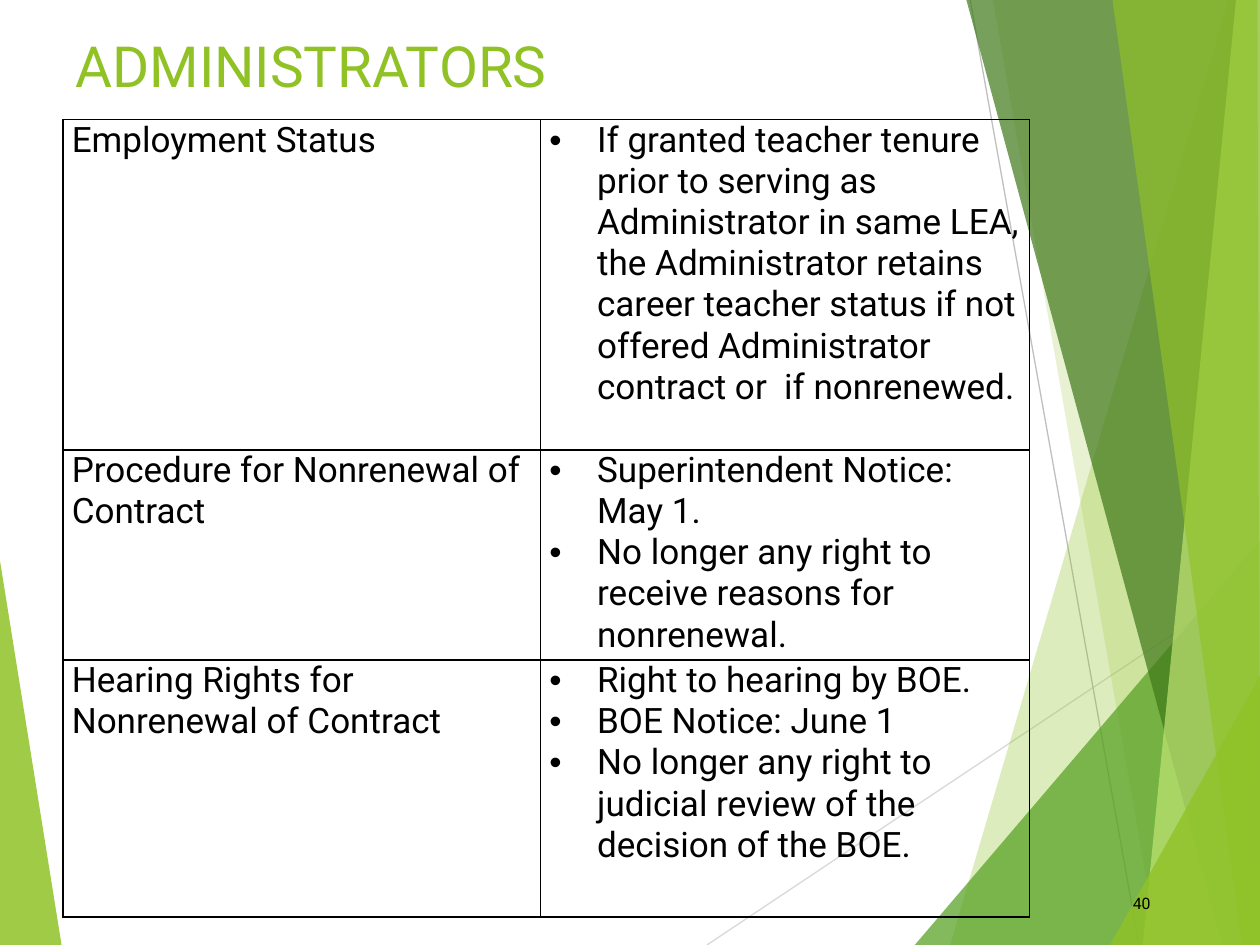
from dataclasses import dataclass

from lxml import etree
from pptx import Presentation, util as u
from pptx.dml.color import RGBColor
from pptx.enum import shapes, text
from pptx.oxml.ns import qn

SLIDE_W, SLIDE_H = u.Inches(10), u.Inches(7.5)


@dataclass(frozen=True)
class Theme:
    font: str = "Roboto"
    lime: str = "90C226"
    green: str = "54A021"
    forest: str = "3F7819"
    pale: str = "C0E474"
    ink: str = "000000"
    light_gray: str = "D9D9D9"
    gray: str = "BFBFBF"
    title_size: float = 32.4
    body_size: float = 20
    number_size: float = 9
    rule_width: float = 1
    ray_width: float = 0.75


THEME = Theme()


# All positions are percentages of the slide's width and height.
@dataclass(frozen=True)
class Facet:
    points: tuple
    color: str
    opacity: int


@dataclass(frozen=True)
class Ray:
    start: tuple
    end: tuple
    color: str


@dataclass(frozen=True)
class Topic:
    name: str
    points: tuple
    height: float


LEFT_FACET = Facet(((-0.1, 58.5), (4.9, 100.1), (-0.1, 100)), THEME.lime, 85)
RAYS = (
    Ray((56.1, 100), (100.1, 60.9), THEME.light_gray),
    Ray((77, 0), (90.4, 100), THEME.gray),
)
RIGHT_FACETS = (
    Facet(((97.5, 0), (75.4, 100), (100.2, 100), (100.1, 0)), THEME.lime, 30),
    Facet(((78.8, 0), (91.9, 100), (100.1, 100), (100.1, 0)), THEME.lime, 20),
    Facet(((72.6, 100), (100, 57.2), (100.1, 100)), THEME.green, 72),
    Facet(((76.7, 0), (97, 100), (100.1, 100), (100.1, 0)), THEME.forest, 70),
    Facet(((98.1, 0), (90.7, 100), (100.1, 100), (100, 0)), THEME.pale, 70),
    Facet(((88.3, 0), (98.6, 100), (100, 100), (99.8, 0)), THEME.lime, 65),
    Facet(((88.1, 100), (100.1, 71.3), (100.1, 100)), THEME.lime, 80),
)
COLUMNS = (37.9, 38.8)
TOPICS = (
    Topic("Employment Status", (
        "If granted teacher tenure prior to serving as Administrator in same LEA, "
        "the Administrator retains career teacher status if not offered "
        "Administrator contract or  if nonrenewed.",), 34.93),
    Topic("Procedure for Nonrenewal of Contract", (
        "Superintendent Notice:  May 1.",
        "No longer any right to receive reasons for nonrenewal."), 21.87),
    Topic("Hearing Rights for Nonrenewal of Contract", (
        "Right to hearing by BOE.",
        "BOE Notice: June 1",
        "No longer any right to judicial review of the decision of the BOE."), 27.2),
)


def across(percent: float) -> int:
    return round(SLIDE_W * percent / 100)


def down(percent: float) -> int:
    return round(SLIDE_H * percent / 100)


def place(point: tuple) -> tuple:
    return across(point[0]), down(point[1])


def draw_facet(slide, facet: Facet) -> None:
    first, *rest = map(place, facet.points)
    builder = slide.shapes.build_freeform(*first)
    builder.add_line_segments(rest, close=True)
    shape = builder.convert_to_shape()
    shape.shadow.inherit = False
    shape.line.fill.background()
    shape.fill.solid()
    shape.fill.fore_color.rgb = RGBColor.from_string(facet.color)
    color = shape.fill._xPr.find(".//" + qn("a:srgbClr"))
    etree.SubElement(color, qn("a:alpha"), val=str(facet.opacity * 1000))


def draw_ray(slide, ray: Ray) -> None:
    line = slide.shapes.add_connector(
        shapes.MSO_CONNECTOR.STRAIGHT, *place(ray.start), *place(ray.end))
    line.line.color.rgb = RGBColor.from_string(ray.color)
    line.line.width = u.Pt(THEME.ray_width)
    etree.SubElement(line._element.spPr, qn("a:effectLst"))


def write(frame, *lines: str, size: float, color: str = THEME.ink,
          align=text.PP_ALIGN.LEFT, bullet: bool = False) -> None:
    """Fill a text frame with one paragraph per line."""
    frame.word_wrap = True
    for index, line in enumerate(lines):
        paragraph = frame.add_paragraph() if index else frame.paragraphs[0]
        paragraph.alignment = align
        run = paragraph.add_run()
        run.text = line
        run.font.name = THEME.font
        run.font.size = u.Pt(size)
        run.font.color.rgb = RGBColor.from_string(color)
        if bullet:
            props = paragraph._p.get_or_add_pPr()
            indent = u.Inches(0.38)
            props.set("marL", str(indent))
            props.set("indent", str(-indent))
            etree.SubElement(props, qn("a:buFont"), typeface="Arial")
            etree.SubElement(props, qn("a:buChar"), char="•")


def draw_label(slide, label: str, left: float, top: float, width: float,
               height: float, **style) -> None:
    box = slide.shapes.add_textbox(
        across(left), down(top), across(width), down(height))
    box.text_frame.vertical_anchor = text.MSO_ANCHOR.MIDDLE
    write(box.text_frame, label, **style)


def style_cell(cell) -> None:
    cell.margin_left = cell.margin_right = u.Inches(0.07)
    cell.margin_top = cell.margin_bottom = 0
    props = cell._tc.get_or_add_tcPr()
    for side in ("lnL", "lnR", "lnT", "lnB"):
        border = etree.SubElement(
            props, qn(f"a:{side}"), w=str(u.Pt(THEME.rule_width)))
        fill = etree.SubElement(border, qn("a:solidFill"))
        etree.SubElement(fill, qn("a:srgbClr"), val=THEME.ink)
    cell.fill.background()


def draw_topics(slide, left: float, top: float) -> None:
    table = slide.shapes.add_table(
        len(TOPICS), len(COLUMNS), across(left), down(top), across(sum(COLUMNS)),
        down(sum(topic.height for topic in TOPICS))).table
    table.first_row = table.horz_banding = False
    for column, width in zip(table.columns, COLUMNS):
        column.width = across(width)
    for row, topic in zip(table.rows, TOPICS):
        row.height = down(topic.height)
        name, details = row.cells
        for cell in (name, details):
            style_cell(cell)
        write(name.text_frame, topic.name, size=THEME.body_size)
        write(details.text_frame, *topic.points, size=THEME.body_size, bullet=True)


def main() -> None:
    deck = Presentation()
    deck.slide_width, deck.slide_height = SLIDE_W, SLIDE_H
    slide = deck.slides.add_slide(deck.slide_layouts[6])
    draw_facet(slide, LEFT_FACET)
    for ray in RAYS:
        draw_ray(slide, ray)
    for facet in RIGHT_FACETS:
        draw_facet(slide, facet)
    draw_label(slide, "ADMINISTRATORS", 5, 2.2, 90, 9.3,
               size=THEME.title_size, color=THEME.lime)
    draw_topics(slide, 5, 12.67)
    draw_label(slide, "40", 86.7, 92.9, 5.6, 5.3,
               size=THEME.number_size, align=text.PP_ALIGN.RIGHT)
    deck.save("out.pptx")


if __name__ == "__main__":
    main()
